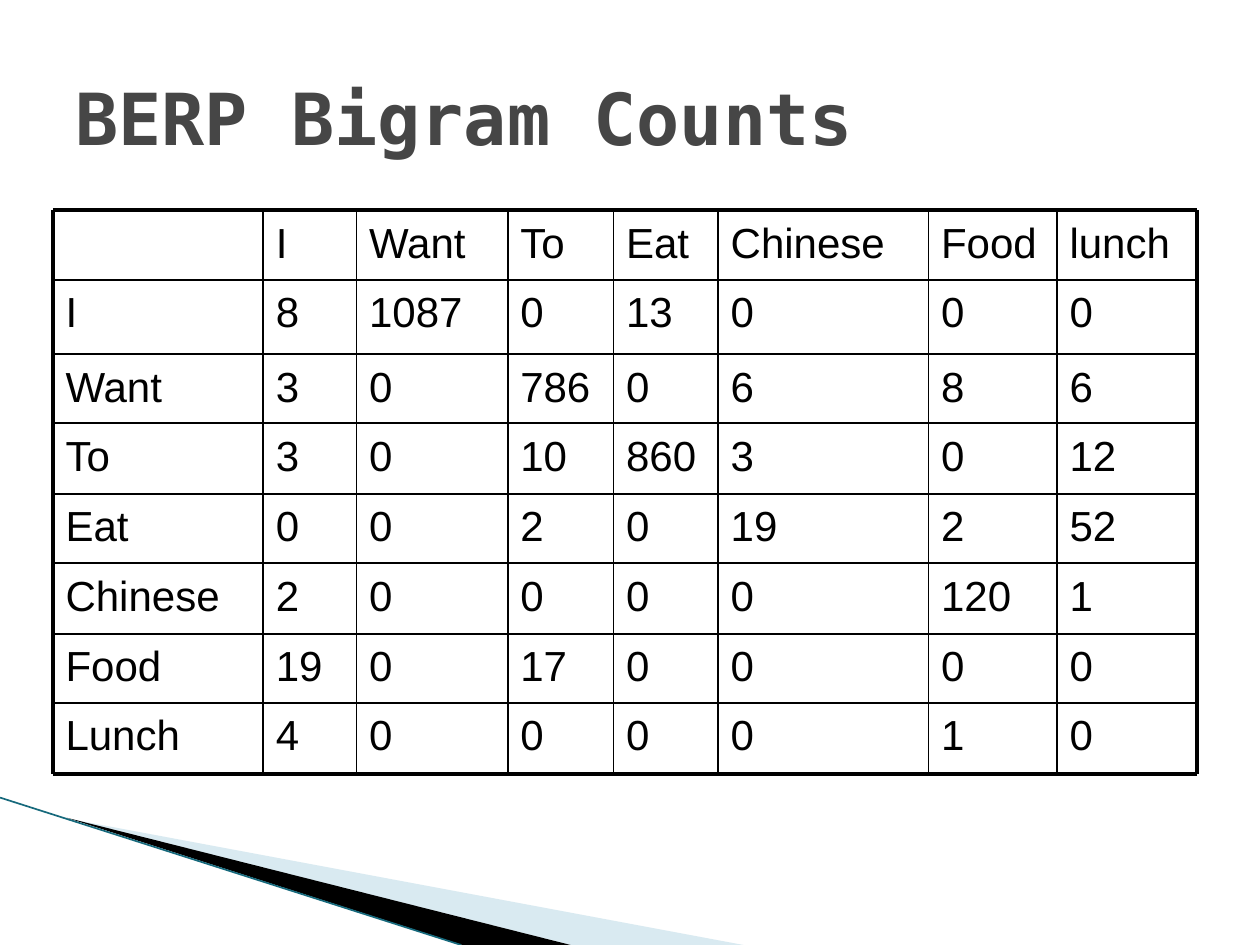
from dataclasses import dataclass
from itertools import product

from lxml.etree import SubElement
from pptx import Presentation
from pptx.dml.color import RGBColor
from pptx.enum.shapes import MSO_CONNECTOR
from pptx.enum.text import MSO_ANCHOR
from pptx.oxml.ns import qn
from pptx.slide import Slide
from pptx.util import Inches, Pt

WORDS = ["I", "Want", "To", "Eat", "Chinese", "Food", "Lunch"]
HEADER = ["", *WORDS[:-1], "lunch"]
COUNTS = [
    [8, 1087, 0, 13, 0, 0, 0],
    [3, 0, 786, 0, 6, 8, 6],
    [3, 0, 10, 860, 3, 0, 12],
    [0, 0, 2, 0, 19, 2, 52],
    [2, 0, 0, 0, 0, 120, 1],
    [19, 0, 17, 0, 0, 0, 0],
    [4, 0, 0, 0, 0, 1, 0],
]
COLUMN_EDGES = [0.42, 2.09, 2.83, 4.03, 4.87, 5.7, 7.37, 8.39, 9.5]
ROW_EDGES = [1.67, 2.22, 2.81, 3.36, 3.92, 4.47, 5.03, 5.58, 6.14]
NO_STYLE_NO_GRID = "{2D5ABB26-0587-4C30-8999-92F81FD0307C}"


def color(value):
    return RGBColor.from_string(value)


def sizes(edges):
    return [Inches(end - start) for start, end in zip(edges, edges[1:])]


def write(frame, text, font="Arial", size=24, ink="000000", bold=False):
    span = frame.paragraphs[0].add_run()
    span.text = text
    span.font.name = font
    span.font.size = Pt(size)
    span.font.color.rgb = color(ink)
    span.font.bold = bold


@dataclass
class BigramPage:
    page: Slide
    black: str = "000000"
    thin: float = 1
    thick: float = 2.25

    def title(self, text, left, top, width, height):
        box = self.page.shapes.add_textbox(*map(Inches, (left, top, width, height)))
        frame = box.text_frame
        frame.word_wrap = True
        frame.vertical_anchor = MSO_ANCHOR.MIDDLE
        write(frame, text, font="DejaVu Sans Mono", size=41, ink="464646", bold=True)

    def wedge(self, points, fill, opacity=100):
        start, *others = [(Inches(x), Inches(y)) for x, y in points]
        builder = self.page.shapes.build_freeform(*start)
        builder.add_line_segments(others, close=True)
        shape = builder.convert_to_shape()
        shape.shadow.inherit = False
        shape.fill.solid()
        shape.fill.fore_color.rgb = color(fill)
        shape.line.fill.background()
        if opacity < 100:
            tint = shape.fill._xPr.find(qn("a:solidFill"))[0]
            SubElement(tint, qn("a:alpha"), val=str(opacity * 1000))

    def line(self, start, end, ink, width):
        connector = self.page.shapes.add_connector(
            MSO_CONNECTOR.STRAIGHT, *map(Inches, (*start, *end)))
        connector.line.color.rgb = color(ink)
        connector.line.width = Pt(width)
        SubElement(connector._element.spPr, qn("a:effectLst"))

    def table(self, rows, column_edges, row_edges):
        widths, heights = sizes(column_edges), sizes(row_edges)
        table = self.page.shapes.add_table(
            len(heights), len(widths), Inches(column_edges[0]),
            Inches(row_edges[0]), sum(widths), sum(heights)).table
        table.first_row = table.horz_banding = False
        table._tbl.tblPr.find(qn("a:tableStyleId")).text = NO_STYLE_NO_GRID
        for column, width in zip(table.columns, widths):
            column.width = width
        for row, height in zip(table.rows, heights):
            row.height = height
        for r, c in product(range(len(heights)), range(len(widths))):
            cell = table.cell(r, c)
            cell.margin_top, cell.margin_bottom = Inches(0.08), Inches(0.02)
            cell.margin_left, cell.margin_right = Inches(0.1), Inches(0)
            cell.fill.background()
            write(cell.text_frame, str(rows[r][c]), ink=self.black)

    def grid(self, column_edges, row_edges):
        """Rule the table, with a thick frame and thin inner lines."""
        left, right = column_edges[0], column_edges[-1]
        top, bottom = row_edges[0], row_edges[-1]
        for y in row_edges:
            width = self.thick if y in (top, bottom) else self.thin
            self.line((left, y), (right, y), self.black, width)
        for x in column_edges:
            width = self.thick if x in (left, right) else self.thin
            self.line((x, top), (x, bottom), self.black, width)


def main():
    deck = Presentation()
    deck.slide_width, deck.slide_height = Inches(10), Inches(7.5)
    bigrams = BigramPage(deck.slides.add_slide(deck.slide_layouts[6]))
    bigrams.wedge([(0.55, 6.5), (5.9, 7.5), (4.53, 7.5)], "A0CBDC", opacity=40)
    bigrams.wedge([(0.53, 6.49), (4.53, 7.5), (3.67, 7.5)], "000000")
    bigrams.line((0, 6.33), (3.66, 7.5), "16697C", 0.95)
    bigrams.title("BERP Bigram Counts", 0.5, 0.3, 9, 1.25)
    rows = [HEADER] + [[word, *counts] for word, counts in zip(WORDS, COUNTS)]
    bigrams.table(rows, COLUMN_EDGES, ROW_EDGES)
    bigrams.grid(COLUMN_EDGES, ROW_EDGES)
    deck.save("out.pptx")


if __name__ == "__main__":
    main()
